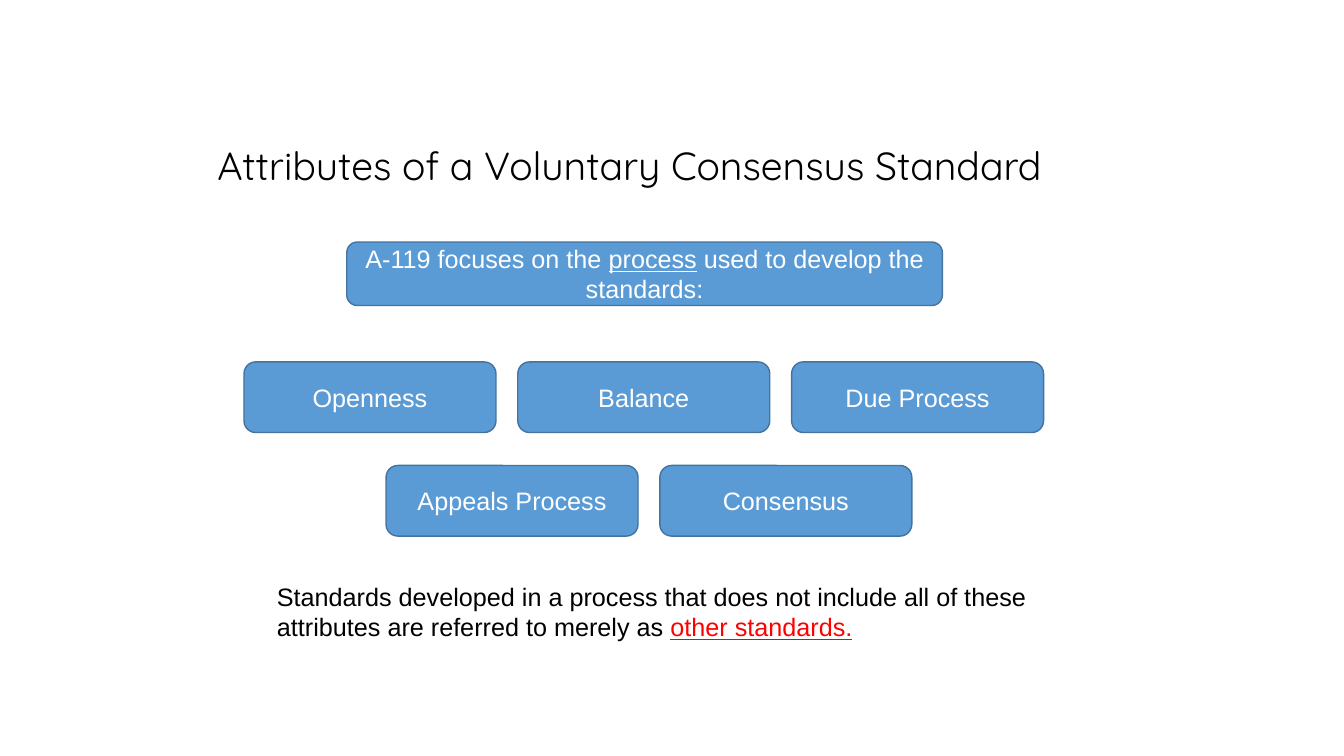
from dataclasses import dataclass

from pptx import Presentation
from pptx.dml.color import RGBColor
from pptx.enum.shapes import MSO_SHAPE
from pptx.enum.text import MSO_ANCHOR, PP_ALIGN
from pptx.util import Cm, Pt


@dataclass(frozen=True)
class Theme:
    box_fill: RGBColor = RGBColor(0x5B, 0x9B, 0xD5)
    box_line: RGBColor = RGBColor(0x43, 0x73, 0x9E)
    light: RGBColor = RGBColor(0xFF, 0xFF, 0xFF)
    dark: RGBColor = RGBColor(0x00, 0x00, 0x00)
    accent: RGBColor = RGBColor(0xFF, 0x00, 0x00)
    title_font: str = "Quicksand"
    body_font: str = "Arial"
    title_size: Pt = Pt(28)
    body_size: Pt = Pt(18)
    line_width: Pt = Pt(1)


theme = Theme()


def write(shape, texts, color, align, anchor, font=theme.body_font, size=theme.body_size):
    frame = shape.text_frame
    frame.word_wrap = True
    frame.vertical_anchor = anchor
    paragraph = frame.paragraphs[0]
    paragraph.alignment = align
    paragraph.font.name = font
    paragraph.font.size = size
    paragraph.font.color.rgb = color
    for text in texts:
        paragraph.add_run().text = text
    return paragraph


def add_box(left, top, width, height, texts):
    box = slide.shapes.add_shape(
        MSO_SHAPE.ROUNDED_RECTANGLE, Cm(left), Cm(top), Cm(width), Cm(height)
    )
    box.shadow.inherit = False
    box.fill.solid()
    box.fill.fore_color.rgb = theme.box_fill
    box.line.color.rgb = theme.box_line
    box.line.width = theme.line_width
    return write(box, texts, theme.light, PP_ALIGN.CENTER, MSO_ANCHOR.MIDDLE)


presentation = Presentation()
presentation.slide_width = Cm(33.87)
presentation.slide_height = Cm(19.05)
slide = presentation.slides.add_slide(presentation.slide_layouts[6])

title = slide.shapes.add_textbox(Cm(4.72), Cm(3.12), Cm(23.6), Cm(2.21))
title.text_frame.margin_right = Cm(1.57)
heading = write(
    title,
    ["Attributes of a Voluntary Consensus Standard"],
    theme.dark,
    PP_ALIGN.CENTER,
    MSO_ANCHOR.MIDDLE,
    theme.title_font,
    theme.title_size,
)
heading.line_spacing = 0.9

focus = add_box(
    8.74, 6.1, 15.01, 1.6,
    ["A-119 focuses on the ", "process", " used to develop the standards:"],
)
focus.runs[1].font.underline = True

attribute_width, attribute_height, attribute_pitch = 6.35, 1.78, 6.9
attribute_rows = [
    (6.15, 9.12, ["Openness", "Balance", "Due Process"]),
    (9.73, 11.73, ["Appeals Process", "Consensus"]),
]
for row_left, row_top, attributes in attribute_rows:
    for column, attribute in enumerate(attributes):
        left = row_left + column * attribute_pitch
        add_box(left, row_top, attribute_width, attribute_height, [attribute])

conclusion = slide.shapes.add_textbox(Cm(6.73), Cm(14.53), Cm(20.19), Cm(1.8))
remark = write(
    conclusion,
    [
        "Standards developed in a process that does not include all of these "
        "attributes are referred to merely as ",
        "other standards.",
    ],
    theme.dark,
    PP_ALIGN.LEFT,
    MSO_ANCHOR.TOP,
)
remark.runs[1].font.underline = True
remark.runs[1].font.color.rgb = theme.accent

presentation.save("out.pptx")
